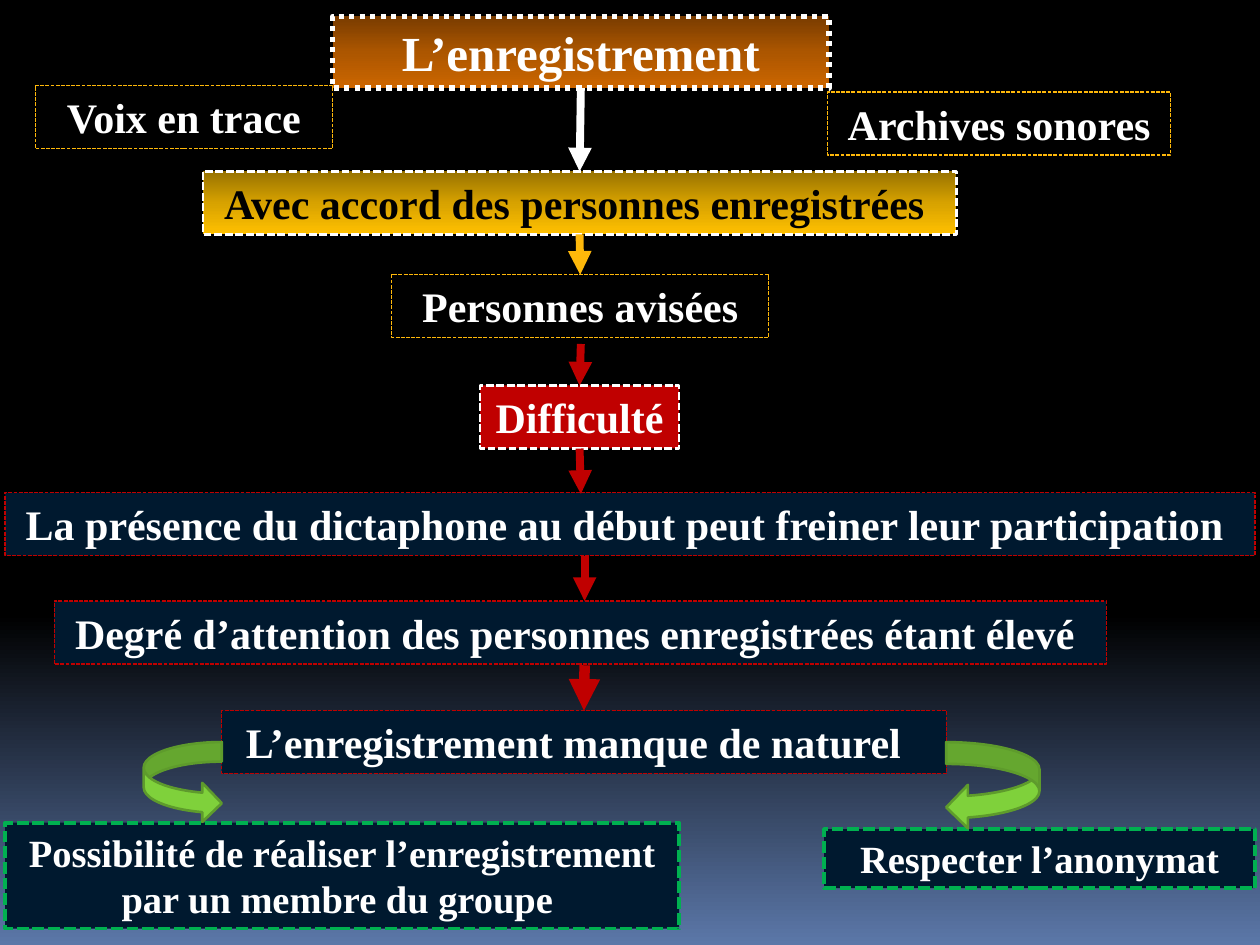
"""Build a one-slide flow chart on the conditions of sound recording."""
import pptx
import pptx.dml.color
import pptx.enum.dml
import pptx.enum.shapes
import pptx.enum.text
import pptx.oxml.ns
import pptx.util
from lxml import etree

Inches = pptx.util.Inches
Pt = pptx.util.Pt
qn = pptx.oxml.ns.qn
SHAPES = pptx.enum.shapes.MSO_SHAPE
DASH = pptx.enum.dml.MSO_LINE.SQUARE_DOT
DOT = pptx.enum.dml.MSO_LINE.ROUND_DOT
TOP, BOTTOM = 0, 2
NAVY, RED, AMBER, GREEN = "00192F", "C00000", "FEB80A", "00B050"
WHITE, BLACK = "FFFFFF", "000000"


def colour(value):
    return pptx.dml.color.RGBColor.from_string(value)


def fill_gradient(fill, element, stops):
    fill.gradient()
    fill.gradient_angle = 270
    stop_list = element.find(".//" + qn("a:gsLst"))
    for stop in list(stop_list):
        stop_list.remove(stop)
    for percent, value in stops:
        stop = etree.SubElement(stop_list, qn("a:gs"), pos=str(percent * 1000))
        etree.SubElement(stop, qn("a:srgbClr"), val=value)


def write_text(frame, text, size=24, color=WHITE, bold=True, font="Times New Roman"):
    frame.word_wrap = True
    frame.auto_size = pptx.enum.text.MSO_AUTO_SIZE.SHAPE_TO_FIT_TEXT
    frame.vertical_anchor = pptx.enum.text.MSO_ANCHOR.TOP
    paragraph = frame.paragraphs[0]
    paragraph.alignment = pptx.enum.text.PP_ALIGN.CENTER
    run = paragraph.add_run()
    run.text = text
    run.font.size = Pt(size)
    run.font.bold = bold
    run.font.name = font
    run.font.color.rgb = colour(color)


class FlowSlide:
    def __init__(self, presentation):
        self.slide = presentation.slides.add_slide(presentation.slide_layouts[6])

    def background(self, stops):
        fill_gradient(self.slide.background.fill, self.slide.element, stops)

    def shape(self, kind, place, fill, line, width, dash=None):
        shape = self.slide.shapes.add_shape(kind, *map(Inches, place))
        shape.shadow.inherit = False
        if fill is None:
            shape.fill.background()
        elif isinstance(fill, str):
            shape.fill.solid()
            shape.fill.fore_color.rgb = colour(fill)
        else:
            fill_gradient(shape.fill, shape.element, fill)
        shape.line.color.rgb = colour(line)
        shape.line.width = Pt(width)
        if dash is not None:
            shape.line.dash_style = dash
        return shape

    def box(self, text, place, fill=None, line=AMBER, width=0.75, dash=DASH, **style):
        box = self.shape(SHAPES.RECTANGLE, place, fill, line, width, dash)
        write_text(box.text_frame, text, **style)
        return box

    def arrow(self, x, top, bottom, color=RED, width=4.5, source=None, target=None):
        arrow = self.slide.shapes.add_connector(
            pptx.enum.shapes.MSO_CONNECTOR.STRAIGHT,
            Inches(x), Inches(top), Inches(x), Inches(bottom))
        arrow.line.color.rgb = colour(color)
        arrow.line.width = Pt(width)
        etree.SubElement(arrow.line._get_or_add_ln(), qn("a:tailEnd"), type="triangle")
        etree.SubElement(arrow.element.spPr, qn("a:effectLst"))
        if source is not None:
            arrow.begin_connect(source, BOTTOM)
        if target is not None:
            arrow.end_connect(target, TOP)


def main():
    presentation = pptx.Presentation()
    presentation.slide_width, presentation.slide_height = Inches(10), Inches(7.5)
    flow = FlowSlide(presentation)
    flow.background([(0, BLACK), (65, BLACK), (100, "5B77A8")])

    flow.box("Voix en trace", (0.28, 0.68, 2.36, 0.5))
    flow.box("Archives sonores", (6.57, 0.73, 2.72, 0.5))
    consent = flow.box(
        "Avec accord des personnes enregistrées ", (1.61, 1.36, 5.98, 0.5),
        fill=[(0, "977200"), (50, "D7A200"), (100, "FFC000")],
        line=WHITE, width=1.5, color=BLACK)
    informed = flow.box("Personnes avisées", (3.11, 2.18, 2.99, 0.5))
    difficulty = flow.box("Difficulté", (3.81, 3.06, 1.58, 0.5),
                          fill=RED, line=WHITE, width=1.5)
    flow.box("La présence du dictaphone au début peut freiner leur participation ",
             (0.04, 3.91, 9.92, 0.5), fill=NAVY, line=RED)
    flow.box("Degré d’attention des personnes enregistrées étant élevé ",
             (0.43, 4.77, 8.35, 0.5), fill=NAVY, line=RED)
    unnatural = flow.box("L’enregistrement manque de naturel  ",
                         (1.76, 5.64, 5.75, 0.5), fill=NAVY, line=RED)
    recording = flow.box(
        "L’enregistrement", (2.64, 0.13, 3.94, 0.57),
        fill=[(0, "793C00"), (50, "AC5600"), (100, "CC6600")],
        line=WHITE, width=3, dash=DOT, size=28)

    flow.arrow(4.61, 0.7, 1.36, color=WHITE, source=recording, target=consent)
    flow.arrow(4.61, 1.86, 2.18, color=AMBER, source=consent, target=informed)
    flow.arrow(4.61, 2.73, 3.06, target=difficulty)
    flow.arrow(4.61, 3.56, 3.92, source=difficulty)
    flow.arrow(4.64, 4.41, 4.77)
    flow.arrow(4.64, 5.28, 5.64, width=6, target=unnatural)

    outcome = dict(fill=NAVY, line=GREEN, width=2.25, size=22)
    flow.box("Possibilité de réaliser l’enregistrement par un membre du groupe ",
             (0.04, 6.53, 5.35, 0.84), **outcome)
    flow.box("Respecter l’anonymat", (6.54, 6.58, 3.42, 0.47), **outcome)
    for kind, place in ((SHAPES.CURVED_RIGHT_ARROW, (1.14, 5.89, 0.62, 0.64)),
                        (SHAPES.CURVED_LEFT_ARROW, (7.51, 5.89, 0.74, 0.69))):
        flow.shape(kind, place, "7FD13B", "5E9B2C", 1.5)

    presentation.save("out.pptx")


if __name__ == "__main__":
    main()
